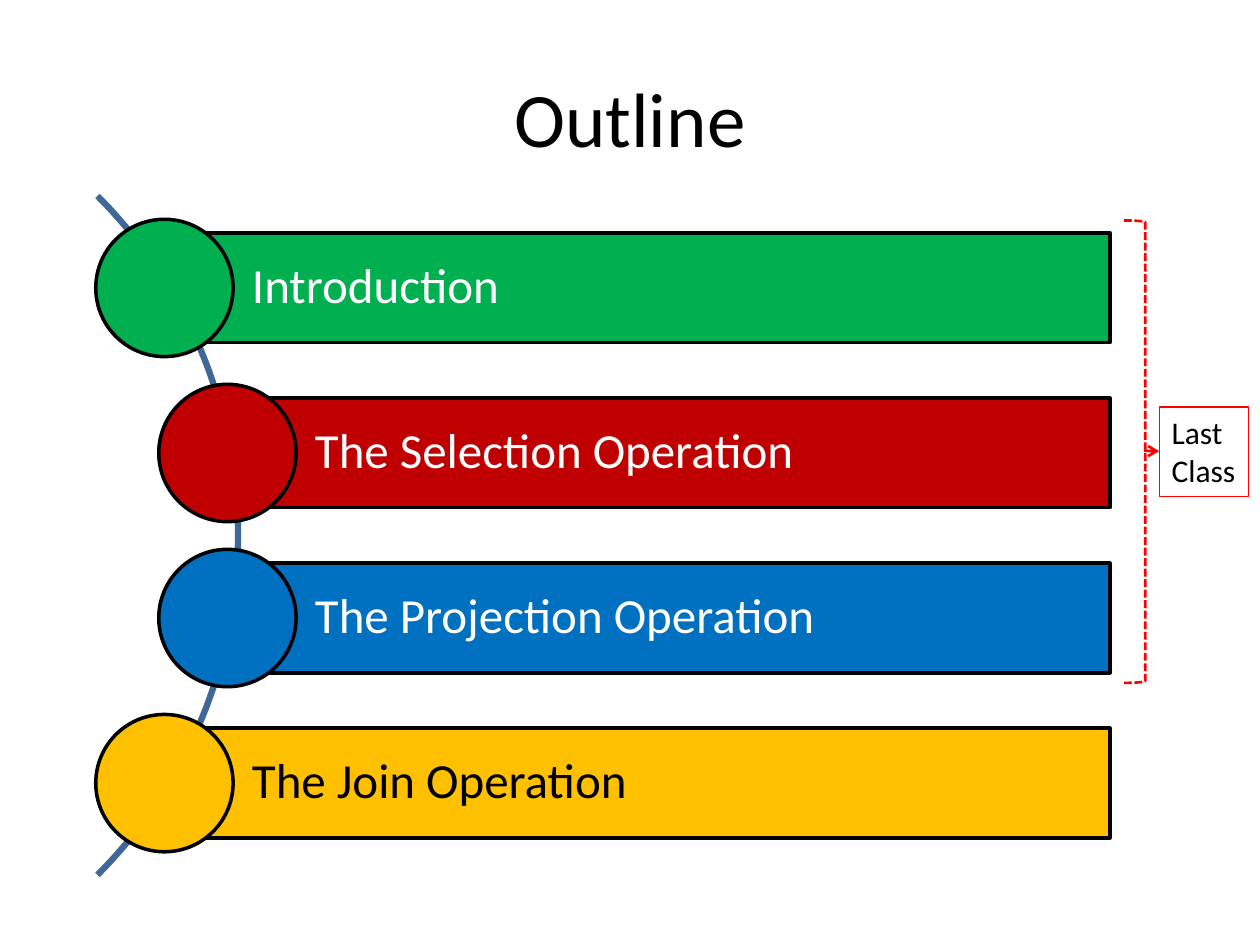
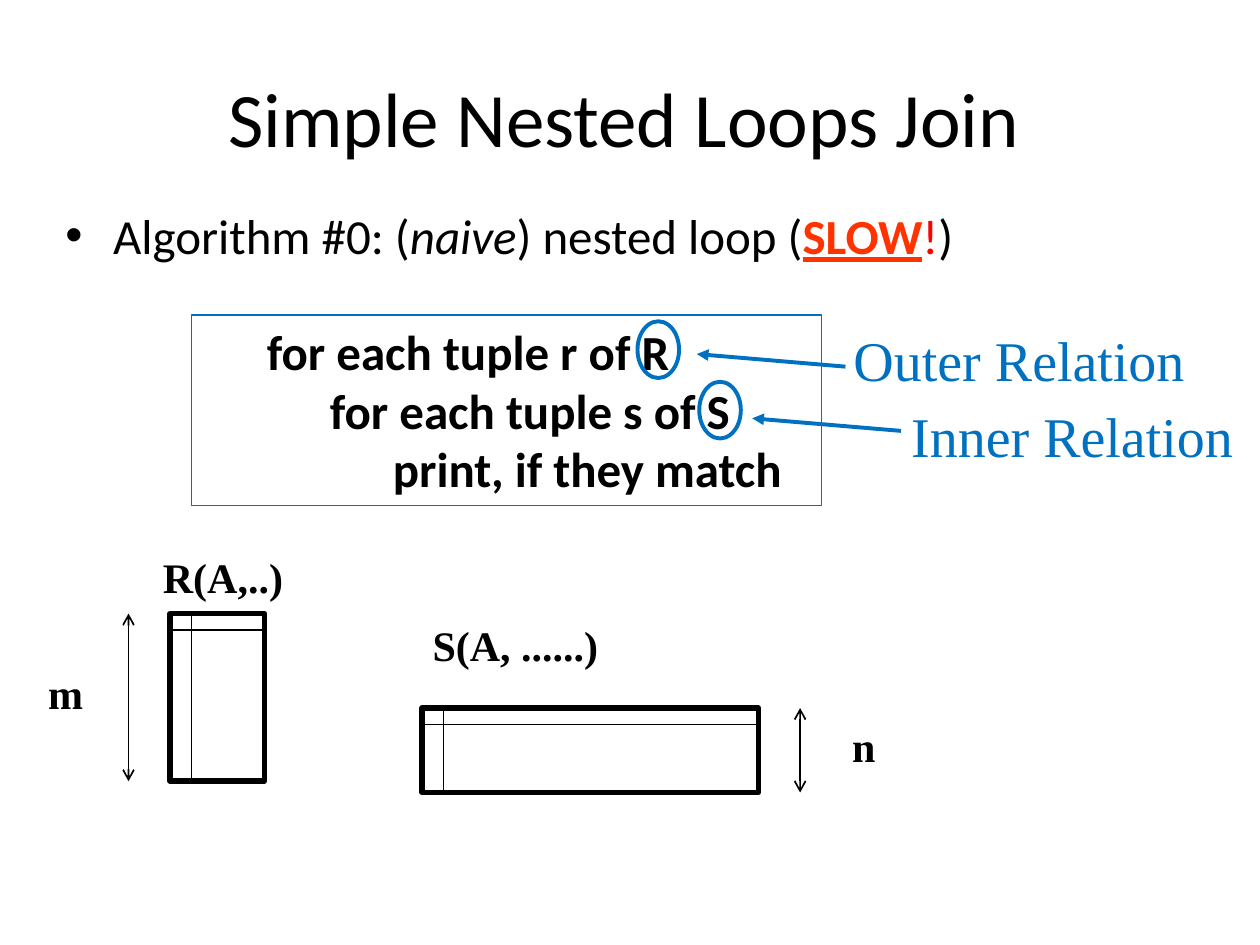
import math
from dataclasses import dataclass

import lxml.etree
import pptx
import pptx.dml.color
import pptx.enum.dml
import pptx.enum.shapes
import pptx.enum.text
import pptx.oxml.ns
import pptx.util

EMU_PER_PX = 9144  # 100 px to the inch
SHAPE = pptx.enum.shapes.MSO_SHAPE
ALIGN = pptx.enum.text.PP_ALIGN
ANCHOR = pptx.enum.text.MSO_ANCHOR


@dataclass(frozen=True)
class Theme:
    sans: str = "Calibri"
    serif: str = "Times New Roman"
    black: str = "000000"
    white: str = "FFFFFF"
    green: str = "00B050"
    dark_red: str = "C00000"
    blue: str = "0070C0"
    amber: str = "FFC000"
    red: str = "FF0000"
    orange: str = "FF3300"
    arc: str = "3F6797"
    title_size: int = 44
    callout_size: int = 32
    body_size: int = 28
    label_size: int = 24
    note_size: int = 18


THEME = Theme()


def px(length):
    return pptx.util.Emu(round(length * EMU_PER_PX))


def rgb(color):
    return pptx.dml.color.RGBColor.from_string(color)


def set_all(target, values):
    for name, value in values.items():
        setattr(target, name, value)


def style_line(line, color, width, dash=None):
    line.color.rgb = rgb(color)
    line.width = pptx.util.Pt(width)
    if dash:
        line.dash_style = dash


def add_xml(parent, tag, **attributes):
    return lxml.etree.SubElement(parent, pptx.oxml.ns.qn(tag), attributes)


def add_outline(page, kind, place, color, width, fill=None, dash=None):
    """Add a preset shape with an outline and an optional fill."""
    shape = page.shapes.add_shape(kind, *map(px, place))
    shape.shadow.inherit = False
    if fill:
        shape.fill.solid()
        shape.fill.fore_color.rgb = rgb(fill)
    else:
        shape.fill.background()
    style_line(shape.line, color, width, dash)
    return shape


def add_line(page, start, end, color, width, dash=None, head=None, tail=None):
    connector = page.shapes.add_connector(
        pptx.enum.shapes.MSO_CONNECTOR.STRAIGHT, *map(px, start + end))
    style_line(connector.line, color, width, dash)
    properties = connector.element.spPr
    outline = properties.find(pptx.oxml.ns.qn("a:ln"))
    for tag, arrow in (("a:headEnd", head), ("a:tailEnd", tail)):
        if arrow:
            add_xml(outline, tag, type=arrow)
    add_xml(properties, "a:effectLst")


def write_para(para, spans, size, font, color, bold=False, **para_format):
    """Write spans: each is a text, or a text with its own font values and colour."""
    set_all(para, {"alignment": ALIGN.LEFT, **para_format})
    for span in spans:
        text, own = (span, {}) if isinstance(span, str) else span
        run = para.add_run()
        run.text = text
        values = {"name": font, "size": pptx.util.Pt(size), "bold": bold, **own}
        run.font.color.rgb = rgb(values.pop("color", color))
        set_all(run.font, values)


def set_frame(box, **values):
    set_all(box.text_frame, {"word_wrap": True, "vertical_anchor": ANCHOR.TOP, **values})
    return box.text_frame


def add_text(page, place, spans, size, font, color=THEME.black, frame=None, **para_format):
    box = page.shapes.add_textbox(*map(px, place))
    para = set_frame(box, **(frame or {})).paragraphs[0]
    write_para(para, spans, size, font, color, **para_format)
    return para


def add_title(page, text, left=50, width=900):
    add_text(page, (left, 30, width, 125), [text], THEME.title_size, THEME.sans,
             frame={"vertical_anchor": ANCHOR.MIDDLE}, alignment=ALIGN.CENTER)


def add_arc(page, center_x, center_y, radius):
    """Draw the quarter circle that opens to the left."""
    points = [(px(center_x + radius * math.cos(math.radians(angle))),
               px(center_y + radius * math.sin(math.radians(angle))))
              for angle in range(-45, 46)]
    builder = page.shapes.build_freeform(*points[0])
    builder.add_line_segments(points[1:], close=False)
    arc = builder.convert_to_shape()
    arc.shadow.inherit = False
    arc.fill.background()
    style_line(arc.line, THEME.arc, 3.6)


def add_topic(page, row, text, indent, fill, color):
    left, top, diameter = 76 + indent, 174 + 131 * row, 109
    bar_left = left + 55
    bar = add_outline(page, SHAPE.RECTANGLE, (bar_left, top + 11, 881 - bar_left, 87),
                      THEME.black, 2, fill)
    frame = set_frame(bar, vertical_anchor=ANCHOR.MIDDLE, margin_left=px(69),
                      margin_right=px(8), margin_top=px(8), margin_bottom=px(8))
    write_para(frame.paragraphs[0], [text], THEME.body_size, THEME.sans, color,
               line_spacing=0.9)
    add_outline(page, SHAPE.OVAL, (left, top, diameter, diameter), THEME.black, 2, fill)


def add_last_class_bracket(page):
    dash = pptx.enum.dml.MSO_LINE.SQUARE_DOT
    add_outline(page, SHAPE.RIGHT_BRACKET, (892, 175, 17, 367), THEME.red, 1.5, dash=dash)
    note = add_outline(page, SHAPE.RECTANGLE, (920, 323, 71, 71), THEME.red, 0.75)
    para = set_frame(note, word_wrap=False).paragraphs[0]
    style = (THEME.note_size, THEME.sans, THEME.black)
    write_para(para, ["Last "], *style)
    para.add_line_break()
    write_para(para, ["Class"], *style)
    add_line(page, (908, 358), (920, 358), THEME.red, 1.5, dash, tail="arrow")


def add_label(page, place, text, wrap=True):
    add_text(page, place, [text], THEME.label_size, THEME.serif, bold=True,
             frame={"word_wrap": wrap}, alignment=ALIGN.CENTER,
             space_before=pptx.util.Pt(3))


def add_relation(page, left, top, width, height, arrow_x):
    """Draw a relation as a ruled box with a height arrow beside it."""
    bottom = top + height
    add_outline(page, SHAPE.RECTANGLE, (left, top, width, height), THEME.black, 3)
    add_line(page, (left + 17, bottom), (left + 17, top), THEME.black, 1)
    add_line(page, (left - 2, top + 13), (left - 2 + width, top + 13), THEME.black, 1)
    add_line(page, (arrow_x, bottom), (arrow_x, top), THEME.black, 1,
             head="arrow", tail="arrow")


def add_loop_code(page, lines):
    box = add_outline(page, SHAPE.RECTANGLE, (152, 250, 500, 151), THEME.blue, 0.75)
    frame = set_frame(box)
    for level, text in enumerate(lines, start=1):
        para = frame.paragraphs[0] if level == 1 else frame.add_paragraph()
        write_para(para, [text], THEME.body_size, THEME.sans, THEME.black, bold=True,
                   level=level)
        set_indent(para, 50 * level, 0)


def set_indent(para, margin, first):
    properties = para._p.get_or_add_pPr()
    properties.set("marL", str(px(margin)))
    properties.set("indent", str(px(first)))
    return properties


def add_callout(page, place, text, start, circle):
    """Name a circled variable and point an arrow at it."""
    add_text(page, place, [text], THEME.callout_size, THEME.serif, THEME.blue,
             frame={"word_wrap": False, "vertical_anchor": ANCHOR.MIDDLE},
             alignment=ALIGN.CENTER)
    end = (start[0] - 118, start[1] - 10)
    add_line(page, start, end, THEME.blue, 2.25, tail="triangle")
    add_outline(page, SHAPE.OVAL, (*circle, 33, 45), THEME.blue, 2.25)


def build_outline(page):
    add_title(page, "Outline")
    add_arc(page, -192, 425, 381)
    topics = [
        ("Introduction", 0, THEME.green, THEME.white),
        ("The Selection Operation", 50, THEME.dark_red, THEME.white),
        ("The Projection Operation", 50, THEME.blue, THEME.white),
        ("The Join Operation", 0, THEME.amber, THEME.black),
    ]
    for row, topic in enumerate(topics):
        add_topic(page, row, *topic)
    add_last_class_bracket(page)


def build_nested_loops(page):
    add_title(page, "Simple Nested Loops Join", left=8, width=975)
    spans = [
        "Algorithm #0: (",
        ("naive", {"italic": True}),
        ") nested loop (",
        ("SLOW", {"color": THEME.orange, "bold": True, "underline": True}),
        ("!", {"color": THEME.red}),
        ")",
    ]
    bullet = add_text(page, (42, 158, 933, 542), spans, THEME.body_size, THEME.sans,
                      space_before=pptx.util.Pt(2))
    properties = set_indent(bullet, 38, -38)
    add_xml(properties, "a:buFont", typeface="Arial")
    add_xml(properties, "a:buChar", char="•")

    add_relation(page, 135, 487, 75, 133, arrow_x=102)
    add_relation(page, 335, 562, 267, 67, arrow_x=635)
    add_label(page, (102, 433, 150, 50), "R(A,..)")
    add_label(page, (318, 487, 182, 50), "S(A, ......)")
    add_label(page, (28, 525, 48, 50), "m", wrap=False)
    add_label(page, (666, 567, 39, 50), "n", wrap=False)

    add_loop_code(page, ["for each tuple r of R", "for each tuple s of S",
                         "print, if they match"])
    add_callout(page, (666, 253, 286, 64), "Outer Relation", (671, 291), (506, 255))
    add_callout(page, (712, 313, 278, 64), "Inner Relation", (715, 342), (555, 303))


def main():
    deck = pptx.Presentation()
    set_all(deck, {"slide_width": px(1000), "slide_height": px(750)})
    for build in (build_outline, build_nested_loops):
        build(deck.slides.add_slide(deck.slide_layouts[6]))
    deck.save("out.pptx")


if __name__ == "__main__":
    main()
